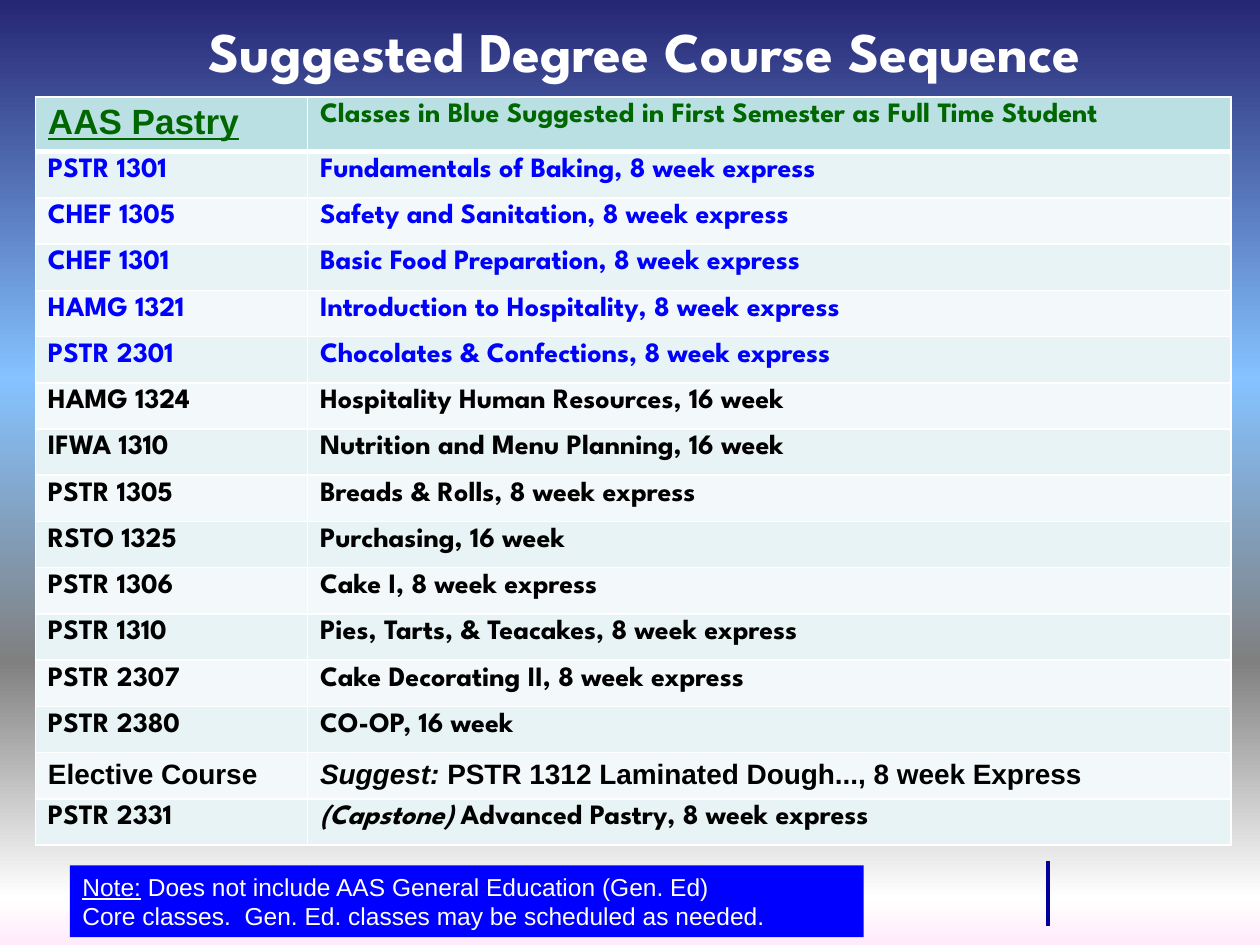
from lxml.etree import SubElement
from pptx import Presentation
from pptx.dml.color import RGBColor
from pptx.enum.shapes import MSO_CONNECTOR, MSO_SHAPE
from pptx.enum.text import MSO_ANCHOR, PP_ALIGN
from pptx.oxml.ns import qn
from pptx.util import Pt

COLORS = {
    "white": "FFFFFF", "black": "000000", "blue": "0000FF", "green": "006600",
    "navy": "000099", "header": "BBE0E3", "odd": "E7F3F4", "even": "F3F9FA",
}
SKY = [(0, "262673"), (40, "85C2FF"), (70, "808080"), (95, "FFFFFF"), (100, "FFEBFA")]
DISPLAY, PLAIN = "League Spartan", "Arial"
ROW_HEIGHT, HEADER_HEIGHT = 26.4, 31

COURSES = [
    ("PSTR 1301", "Fundamentals of Baking, 8 week express"),
    ("CHEF 1305", "Safety and Sanitation, 8 week express"),
    ("CHEF 1301", "Basic Food Preparation, 8 week express"),
    ("HAMG 1321", "Introduction to Hospitality, 8 week express"),
    ("PSTR 2301", "Chocolates & Confections, 8 week express"),
    ("HAMG 1324", "Hospitality Human Resources, 16 week"),
    ("IFWA 1310", "Nutrition and Menu Planning, 16 week"),
    ("PSTR 1305", "Breads & Rolls, 8 week express"),
    ("RSTO 1325", "Purchasing, 16 week"),
    ("PSTR 1306", "Cake I, 8 week express"),
    ("PSTR 1310", "Pies, Tarts, & Teacakes, 8 week express"),
    ("PSTR 2307", "Cake Decorating II, 8 week express"),
    ("PSTR 2380", "CO-OP, 16 week"),
    ("Elective Course", "Suggest:| PSTR 1312 Laminated Dough..., 8 week Express"),
    ("PSTR 2331", "(Capstone) |Advanced Pastry, 8 week express"),
]
FIRST_SEMESTER = 5


def write(paragraph, text, font, size, color, bold=True, lead=None):
    """Write text; a part before "|" gets the lead style, "italic" or "underline"."""
    parts = text.split("|")
    for index, part in enumerate(parts):
        run = paragraph.add_run()
        run.text = part
        run.font.name, run.font.size, run.font.bold = font, Pt(size), bold
        run.font.color.rgb = RGBColor.from_string(COLORS[color])
        if lead and index == 0 and len(parts) > 1:
            setattr(run.font, lead, True)


def style_cell(cell, fill, top, bottom):
    """Give the cell white borders of the given widths and a solid fill."""
    properties = cell._tc.get_or_add_tcPr()
    for side, width in (("L", 1), ("R", 1), ("T", top), ("B", bottom)):
        border = SubElement(properties, qn(f"a:ln{side}"), w=str(Pt(width)))
        solid = SubElement(border, qn("a:solidFill"))
        SubElement(solid, qn("a:srgbClr"), val=COLORS["white"])
    cell.fill.solid()
    cell.fill.fore_color.rgb = RGBColor.from_string(COLORS[fill])


deck = Presentation()
deck.slide_width, deck.slide_height = Pt(720), Pt(540)
slide = deck.slides.add_slide(deck.slide_layouts[6])

# Background gradient, running from top to bottom
background = slide.background.fill
background.gradient()
background.gradient_angle = 270
stops = next(slide.element.iter(qn("a:gsLst")))
for stop in list(stops):
    stops.remove(stop)
for percent, color in SKY:
    stop = SubElement(stops, qn("a:gs"), pos=str(percent * 1000))
    SubElement(stop, qn("a:srgbClr"), val=color)

# Accent line at the lower right
accent = slide.shapes.add_connector(MSO_CONNECTOR.STRAIGHT, Pt(599), Pt(492), Pt(599), Pt(529))
accent.line.color.rgb = RGBColor.from_string(COLORS["navy"])
accent.line.width = Pt(2.25)
SubElement(accent._element.spPr, qn("a:effectLst"))

# Title
title = slide.shapes.add_textbox(Pt(44.6), Pt(-16.6), Pt(648), Pt(90)).text_frame
title.word_wrap = True
title.vertical_anchor = MSO_ANCHOR.MIDDLE
title.paragraphs[0].alignment = PP_ALIGN.CENTER
write(title.paragraphs[0], "Suggested Degree Course Sequence", DISPLAY, 32, "white")

# Note
note = slide.shapes.add_shape(MSO_SHAPE.RECTANGLE, Pt(40), Pt(494.5), Pt(453.6), Pt(41))
note.shadow.inherit = False
note.fill.solid()
note.fill.fore_color.rgb = RGBColor.from_string(COLORS["blue"])
note.line.fill.background()
note_text = note.text_frame
note_text.vertical_anchor = MSO_ANCHOR.TOP
note_lines = [
    "Note:| Does not include AAS General Education (Gen. Ed)",
    "Core classes.  Gen. Ed. classes may be scheduled as needed.",
]
for index, line in enumerate(note_lines):
    paragraph = note_text.add_paragraph() if index else note_text.paragraphs[0]
    paragraph.alignment = PP_ALIGN.LEFT
    write(paragraph, line, PLAIN, 14, "white", bold=False, lead="underline")

# Course table
table = slide.shapes.add_table(
    len(COURSES) + 1, 2, Pt(20.2), Pt(55.4), Pt(683.3),
    Pt(HEADER_HEIGHT + ROW_HEIGHT * len(COURSES))).table
table.first_row = table.horz_banding = False
table.columns[0].width, table.columns[1].width = Pt(155.5), Pt(527.8)

table.rows[0].height = Pt(HEADER_HEIGHT)
program, hint = table.rows[0].cells
for cell in (program, hint):
    style_cell(cell, "header", top=1, bottom=3)
write(program.text_frame.paragraphs[0], "AAS Pastry|", PLAIN, 20, "green", lead="underline")
write(hint.text_frame.paragraphs[0],
      "Classes in Blue Suggested in First Semester as Full Time Student", DISPLAY, 16, "green")

for number, course in enumerate(COURSES, start=1):
    table.rows[number].height = Pt(ROW_HEIGHT)
    font = PLAIN if course[0] == "Elective Course" else DISPLAY
    color = "blue" if number <= FIRST_SEMESTER else "black"
    for cell, text in zip(table.rows[number].cells, course):
        style_cell(cell, "odd" if number % 2 else "even", top=3 if number == 1 else 1, bottom=1)
        write(cell.text_frame.paragraphs[0], text, font, 16, color, lead="italic")

deck.save("out.pptx")
